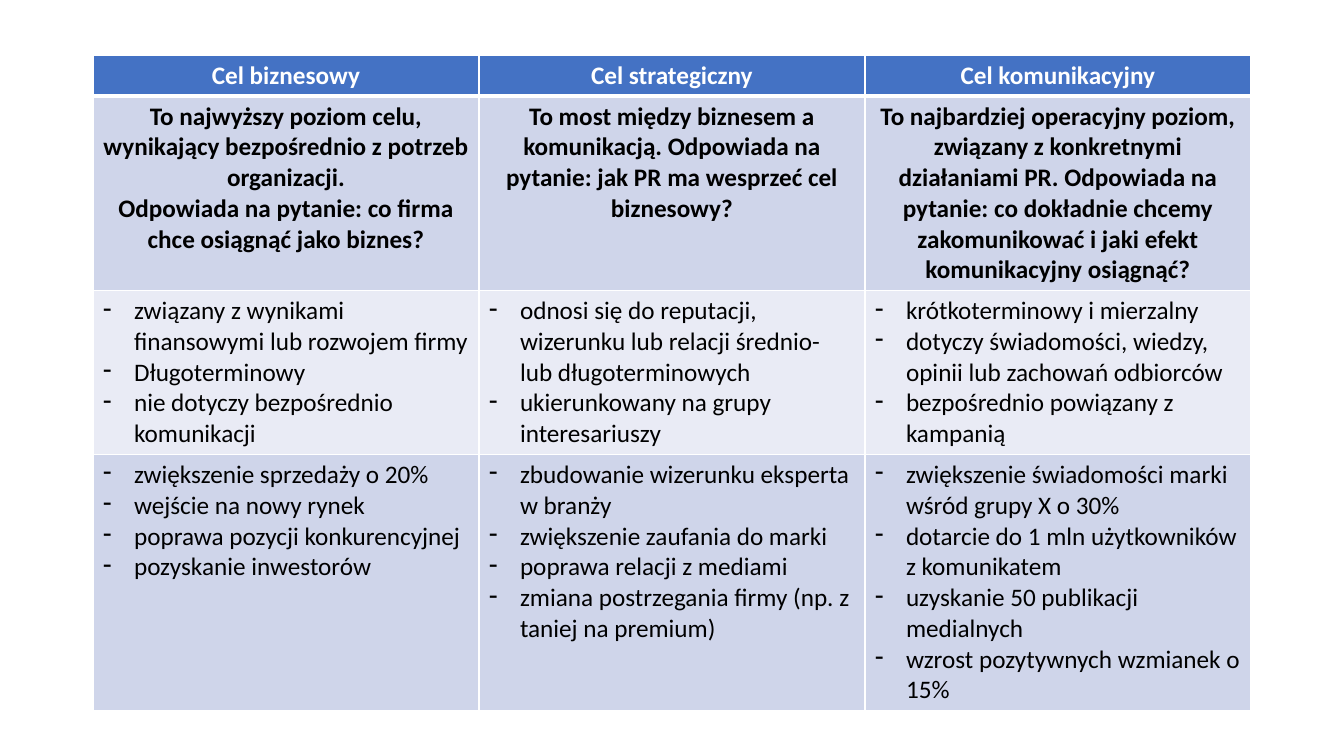
import pptx
import pptx.util
import pptx.dml.color
import pptx.enum.text
import pptx.oxml.ns
from lxml import etree

# Content: one tuple of cells per row, one line per paragraph
HEADS = ("Cel biznesowy", "Cel strategiczny", "Cel komunikacyjny")
ROLES = (
    ("To najwyższy poziom celu, wynikający bezpośrednio z potrzeb organizacji.",
     "Odpowiada na pytanie: co firma chce osiągnąć jako biznes?"),
    ("To most między biznesem a komunikacją. Odpowiada na pytanie: "
     "jak PR ma wesprzeć cel biznesowy?",),
    ("To najbardziej operacyjny poziom, związany z konkretnymi działaniami PR. "
     "Odpowiada na pytanie: co dokładnie chcemy zakomunikować i jaki efekt "
     "komunikacyjny osiągnąć?",),
)
TRAITS = (
    ("związany z wynikami finansowymi lub rozwojem firmy",
     "Długoterminowy",
     "nie dotyczy bezpośrednio komunikacji"),
    ("odnosi się do reputacji, wizerunku lub relacji średnio- lub długoterminowych",
     "ukierunkowany na grupy interesariuszy"),
    ("krótkoterminowy i mierzalny",
     "dotyczy świadomości, wiedzy, opinii lub zachowań odbiorców",
     "bezpośrednio powiązany z kampanią"),
)
CASES = (
    ("zwiększenie sprzedaży o 20%",
     "wejście na nowy rynek",
     "poprawa pozycji konkurencyjnej",
     "pozyskanie inwestorów"),
    ("zbudowanie wizerunku eksperta w branży",
     "zwiększenie zaufania do marki",
     "poprawa relacji z mediami",
     "zmiana postrzegania firmy (np. z taniej na premium)"),
    ("zwiększenie świadomości marki wśród grupy X o 30%",
     "dotarcie do 1 mln użytkowników z komunikatem",
     "uzyskanie 50 publikacji medialnych",
     "wzrost pozytywnych wzmianek o 15%"),
)

THEME = {"font": "Calibri", "size": 18, "white": "FFFFFF", "black": "000000",
         "blue": "4472C4", "mid": "CFD5EA", "pale": "E9EBF5"}

# Rows: cells, height in px, fill, text colour, bold, bulleted
ROWS = (
    (tuple((head,) for head in HEADS), 41, "blue", "white", True, False),
    (ROLES, 194, "mid", "black", True, False),
    (TRAITS, 164, "pale", "black", False, True),
    (CASES, 255, "mid", "black", False, True),
)
LEFT, TOP, COL, INDENT = 93, 55, 386, 31
THIN, THICK = 1, 3


def px(count):
    return pptx.util.Emu(round(count * 914400 / 100.8))


def tint(name):
    return pptx.dml.color.RGBColor.from_string(THEME[name])


def sub(parent, tag, **attrs):
    return etree.SubElement(parent, pptx.oxml.ns.qn(tag), attrs)


def edge(cell, sides):
    """Draw white borders; they come before the fill in the cell XML."""
    props = cell._tc.get_or_add_tcPr()
    for spot, (side, width) in enumerate(sides):
        line = sub(props, "a:ln" + side, w=str(pptx.util.Pt(width)))
        sub(sub(line, "a:solidFill"), "a:srgbClr", val=THEME["white"])
        props.insert(spot, line)


def dash(para):
    props = para._p.get_or_add_pPr()
    props.set("marL", str(px(INDENT)))
    props.set("indent", str(-px(INDENT)))
    sub(props, "a:buFontTx")
    sub(props, "a:buChar", char="-")


def write(cell, lines, ink, bold, listed):
    frame = cell.text_frame
    frame.text = "\n".join(lines)
    for para in frame.paragraphs:
        if listed:
            dash(para)
        else:
            para.alignment = pptx.enum.text.PP_ALIGN.CENTER
        for run in para.runs:
            run.font.name = THEME["font"]
            run.font.size = pptx.util.Pt(THEME["size"])
            run.font.bold = bold
            run.font.color.rgb = tint(ink)


def main():
    deck = pptx.Presentation()
    deck.slide_width, deck.slide_height = px(1344), px(756)
    slide = deck.slides.add_slide(deck.slide_layouts[6])

    # Table grid
    high = sum(row[1] for row in ROWS)
    table = slide.shapes.add_table(len(ROWS), len(HEADS), px(LEFT), px(TOP),
                                   px(COL * len(HEADS)), px(high)).table
    for col in table.columns:
        col.width = px(COL)

    # Cells
    for r, (cells, tall, fill, ink, bold, listed) in enumerate(ROWS):
        table.rows[r].height = px(tall)
        sides = (("L", THIN), ("R", THIN), ("T", THICK if r == 1 else THIN),
                 ("B", THICK if r == 0 else THIN))
        for c, lines in enumerate(cells):
            cell = table.cell(r, c)
            cell.fill.solid()
            cell.fill.fore_color.rgb = tint(fill)
            edge(cell, sides)
            write(cell, lines, ink, bold, listed)

    deck.save("out.pptx")


if __name__ == "__main__":
    main()
